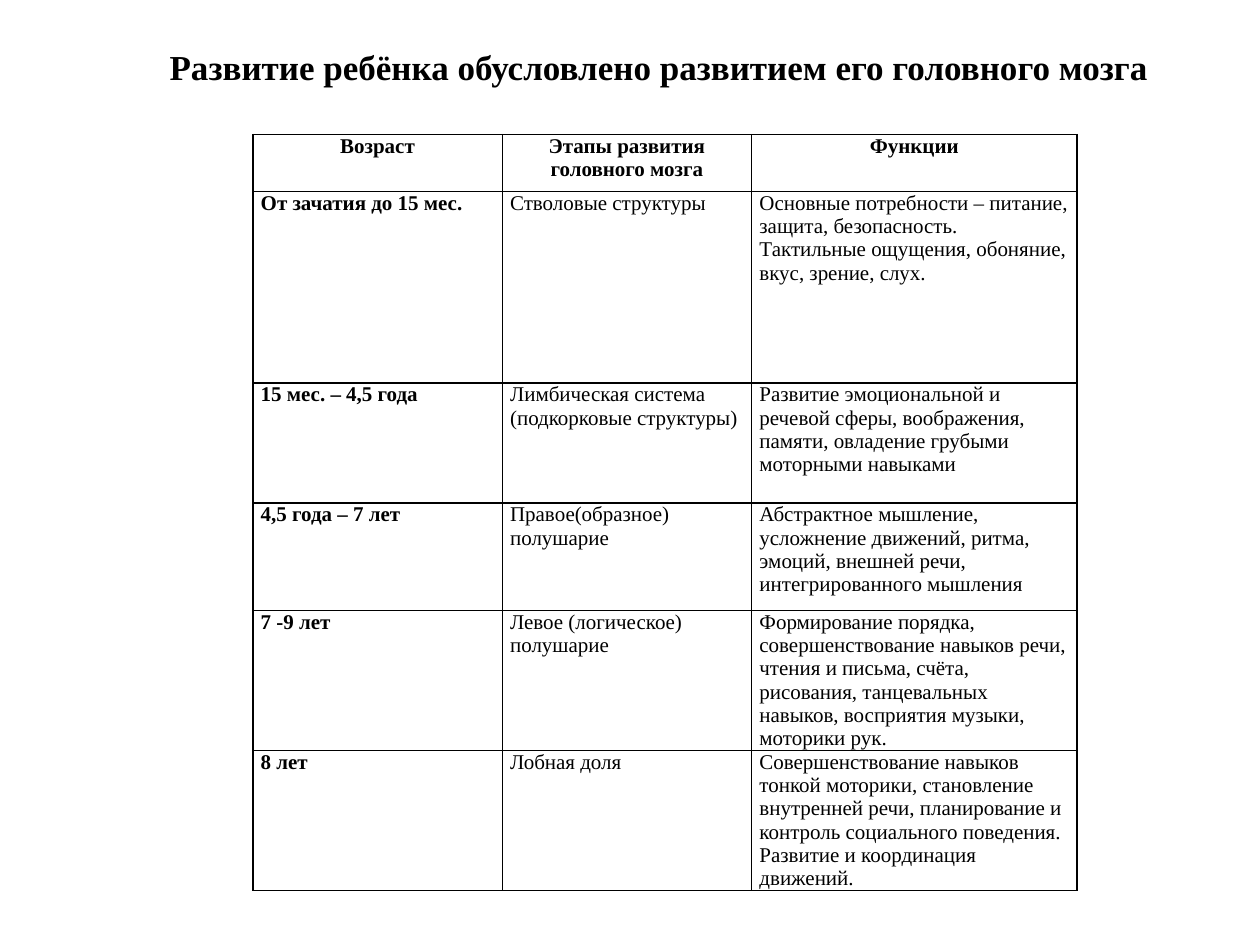
from dataclasses import dataclass

from lxml import etree
from pptx import Presentation
from pptx.dml.color import RGBColor
from pptx.enum.text import MSO_ANCHOR, MSO_AUTO_SIZE, PP_ALIGN
from pptx.oxml.ns import qn
from pptx.util import Pt

BLACK = RGBColor(0, 0, 0)
FONT = "Times New Roman"
LEFT, CENTER = PP_ALIGN.LEFT, PP_ALIGN.CENTER
TOP = MSO_ANCHOR.TOP
NO_AUTOFIT = MSO_AUTO_SIZE.NONE

TITLE = "Развитие ребёнка обусловлено развитием его головного мозга "
HEADERS = ("Возраст", "Этапы развития головного мозга", "Функции")
COLUMN_WIDTHS = (142.5, 142.5, 186)


@dataclass(frozen=True)
class Stage:
    age: str
    brain: str
    functions: str
    height: float


STAGES = (
    Stage(
        "От зачатия до 15 мес.",
        "Стволовые структуры",
        "Основные потребности – питание, защита, безопасность. "
        "Тактильные ощущения, обоняние, вкус, зрение, слух.",
        109.5,
    ),
    Stage(
        "15 мес. – 4,5 года",
        "Лимбическая система\n(подкорковые структуры)",
        "Развитие эмоциональной и речевой сферы, воображения, памяти, "
        "овладение грубыми моторными навыками",
        68.5,
    ),
    Stage(
        "4,5 года – 7 лет",
        "Правое(образное) полушарие",
        "Абстрактное мышление, усложнение движений, ритма, эмоций, "
        "внешней речи, интегрированного мышления",
        61.5,
    ),
    Stage(
        "7 -9 лет",
        "Левое (логическое) полушарие",
        "Формирование порядка, совершенствование навыков речи, чтения и письма, "
        "счёта, рисования, танцевальных навыков, восприятия музыки, моторики рук.",
        68.5,
    ),
    Stage(
        "8 лет",
        "Лобная доля",
        "Совершенствование навыков тонкой моторики, становление внутренней речи, "
        "планирование и контроль социального поведения. "
        "Развитие и координация движений.",
        68.5,
    ),
)


def write_text(text_frame, text: str, *, size: float, bold: bool = False,
               alignment=LEFT) -> None:
    text_frame.text = text
    text_frame.word_wrap = True
    for paragraph in text_frame.paragraphs:
        paragraph.alignment = alignment
        for run in paragraph.runs:
            run.font.name = FONT
            run.font.size = Pt(size)
            run.font.bold = bold
            run.font.color.rgb = BLACK


def add_borders(cell, width: float = 1) -> None:
    properties = cell._tc.get_or_add_tcPr()
    for position, side in enumerate(("lnL", "lnR", "lnT", "lnB")):
        line = etree.Element(qn(f"a:{side}"), w=str(Pt(width)))
        fill = etree.SubElement(line, qn("a:solidFill"))
        etree.SubElement(fill, qn("a:srgbClr"), val=str(BLACK))
        properties.insert(position, line)


def fill_cell(cell, text: str, *, bold: bool, alignment=LEFT) -> None:
    cell.margin_left = cell.margin_right = Pt(4.5)
    cell.margin_top = cell.margin_bottom = 0
    cell.vertical_anchor = TOP
    cell.fill.background()
    write_text(cell.text_frame, text, size=12, bold=bold, alignment=alignment)
    add_borders(cell)


def add_title(slide) -> None:
    title = slide.shapes.title
    title.left, title.top, title.width, title.height = Pt(55), Pt(22.5), Pt(648), Pt(50)
    title.text_frame.auto_size = NO_AUTOFIT
    title.text_frame.vertical_anchor = TOP
    write_text(title.text_frame, TITLE, size=20, bold=True, alignment=CENTER)


def add_stage_table(slide) -> None:
    heights = (32.5, *(stage.height for stage in STAGES))
    table = slide.shapes.add_table(
        len(heights), len(COLUMN_WIDTHS), Pt(144.5), Pt(77),
        Pt(sum(COLUMN_WIDTHS)), Pt(sum(heights)),
    ).table
    table.first_row = table.horz_banding = False
    for column, width in zip(table.columns, COLUMN_WIDTHS):
        column.width = Pt(width)
    for row, height in zip(table.rows, heights):
        row.height = Pt(height)
    for column, header in enumerate(HEADERS):
        fill_cell(table.cell(0, column), header, bold=True, alignment=CENTER)
    for row, stage in enumerate(STAGES, start=1):
        for column, text in enumerate((stage.age, stage.brain, stage.functions)):
            fill_cell(table.cell(row, column), text, bold=column == 0)


def main() -> None:
    presentation = Presentation()
    presentation.slide_width, presentation.slide_height = Pt(720), Pt(540)
    slide = presentation.slides.add_slide(presentation.slide_layouts.get_by_name("Title Only"))
    add_title(slide)
    add_stage_table(slide)
    presentation.save("out.pptx")


if __name__ == "__main__":
    main()
